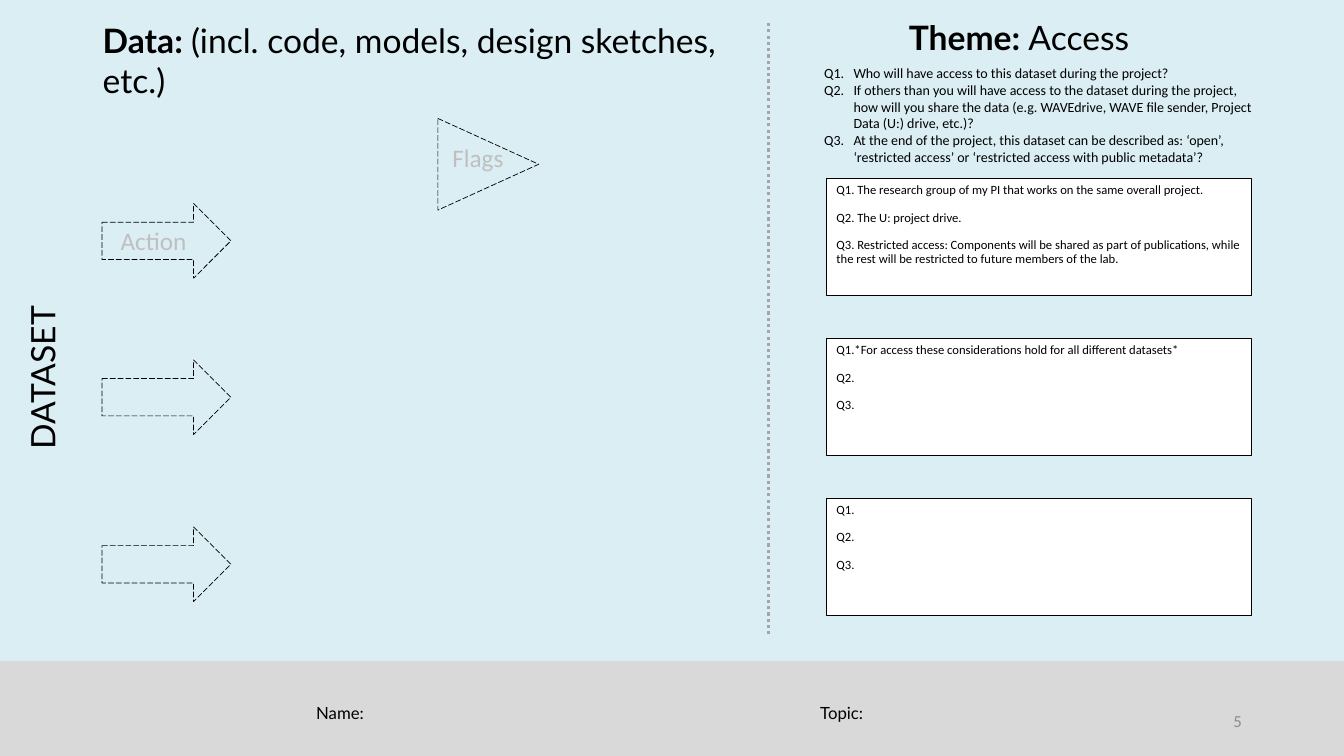
"""Build the data-access worksheet slide."""
import dataclasses

import lxml.etree
import pptx
import pptx.dml.color
import pptx.enum.dml
import pptx.enum.shapes
import pptx.enum.text
import pptx.oxml.ns
import pptx.util

Cm = pptx.util.Cm
Pt = pptx.util.Pt
Shapes = pptx.enum.shapes.MSO_SHAPE
Dash = pptx.enum.dml.MSO_LINE
Align = pptx.enum.text.PP_ALIGN
Anchor = pptx.enum.text.MSO_ANCHOR


@dataclasses.dataclass(frozen=True)
class Theme:
    background: str = "DBEEF4"
    footer: str = "D9D9D9"
    ink: str = "000000"
    paper: str = "FFFFFF"
    divider: str = "A5A5A5"
    hint: str = "BFBFBF"
    page: str = "8C8C8C"
    heading_font: str = "Lato"
    body_font: str = "Calibri"
    heading: int = 24
    label: int = 18
    field: int = 12
    question: int = 10
    answer: int = 9


THEME = Theme()

QUESTIONS = [
    "Q1.\tWho will have access to this dataset during the project?",
    "Q2.\tIf others than you will have access to the dataset during the project, "
    "how will you share the data (e.g. WAVEdrive, WAVE file sender, Project "
    "Data (U:) drive, etc.)?",
    "Q3.\tAt the end of the project, this dataset can be described as: ‘open’, "
    "‘restricted access’ or ‘restricted access with public metadata’?",
]
ANSWERS = [
    [
        "Q1. The research group of my PI that works on the same overall project.",
        "Q2. The U: project drive.",
        "Q3. Restricted access: Components will be shared as part of publications, "
        "while the rest will be restricted to future members of the lab.",
    ],
    ["Q1.*For access these considerations hold for all different datasets*", "Q2.", "Q3."],
    ["Q1.", "Q2.", "Q3."],
]


def rgb(code):
    """Turn a hex code into a colour."""
    return pptx.dml.color.RGBColor.from_string(code)


def set_font(paragraph, size, family, color=THEME.ink):
    """Give a whole paragraph its type."""
    paragraph.font.size = Pt(size)
    paragraph.font.name = family
    paragraph.font.color.rgb = rgb(color)


def add_figure(slide, preset, box, fill=None, line=None, dash=None):
    """Add a preset shape with optional fill and outline."""
    figure = slide.shapes.add_shape(preset, *map(Cm, box))
    figure.shadow.inherit = False
    if fill:
        figure.fill.solid()
        figure.fill.fore_color.rgb = rgb(fill)
    else:
        figure.fill.background()
    if line:
        figure.line.color.rgb = rgb(THEME.ink)
        figure.line.width = Pt(line)
        if dash:
            figure.line.dash_style = dash
    else:
        figure.line.fill.background()
    return figure


def add_label(slide, box, text, size, family, color=THEME.ink, align=Align.LEFT,
              spacing=1.0, lead=""):
    """Add a one-paragraph text box with an optional bold lead-in."""
    label = slide.shapes.add_textbox(*map(Cm, box))
    label.text_frame.word_wrap = True
    paragraph = label.text_frame.paragraphs[0]
    paragraph.alignment = align
    paragraph.line_spacing = spacing
    if lead:
        bold_lead = paragraph.add_run()
        bold_lead.text = lead
        bold_lead.font.bold = True
    paragraph.add_run().text = text
    set_font(paragraph, size, family, color)
    return label


def add_paragraphs(frame, texts):
    """Fill a text frame and return its paragraphs."""
    frame.word_wrap = True
    frame.text = "\n".join(texts)
    return frame.paragraphs


def add_questions(slide, box):
    """Add the questions with hanging indents."""
    questions = slide.shapes.add_textbox(*map(Cm, box))
    for paragraph in add_paragraphs(questions.text_frame, QUESTIONS):
        properties = paragraph._p.get_or_add_pPr()
        properties.set("marL", str(Cm(0.74)))
        properties.set("indent", str(-Cm(0.74)))
        set_font(paragraph, THEME.question, THEME.body_font)


def add_answers(slide, box, texts):
    """Add one outlined answer box."""
    card = add_figure(slide, Shapes.RECTANGLE, box, THEME.paper, 0.75)
    card.text_frame.vertical_anchor = Anchor.TOP
    for row, paragraph in enumerate(add_paragraphs(card.text_frame, texts)):
        paragraph.alignment = Align.LEFT
        paragraph.line_spacing = 0.9
        if row:
            paragraph.space_before = Pt(10)
        set_font(paragraph, THEME.answer, THEME.body_font)


def add_divider(slide, x, top, bottom):
    """Add the dotted vertical divider."""
    divider = slide.shapes.add_connector(
        pptx.enum.shapes.MSO_CONNECTOR.STRAIGHT, Cm(x), Cm(top), Cm(x), Cm(bottom))
    divider.line.color.rgb = rgb(THEME.divider)
    divider.line.width = Pt(2.25)
    divider.line.dash_style = Dash.ROUND_DOT
    lxml.etree.SubElement(divider._element.spPr, pptx.oxml.ns.qn("a:effectLst"))


def main():
    """Build and save the slide."""
    deck = pptx.Presentation()
    deck.slide_width, deck.slide_height = Cm(33.87), Cm(19.05)
    slide = deck.slides.add_slide(deck.slide_layouts[6])
    slide.background.fill.solid()
    slide.background.fill.fore_color.rgb = rgb(THEME.background)

    add_figure(slide, Shapes.RECTANGLE, (0, 16.66, 33.87, 2.39), THEME.footer)
    dataset = add_label(slide, (-4.55, 8.97, 11.43, 1.09), "DATASET", THEME.heading,
                        THEME.heading_font, align=Align.CENTER, spacing=0.8)
    dataset.rotation = 270
    add_divider(slide, 19.36, 0.58, 16.03)
    add_questions(slide, (20.52, 1.5, 11.28, 2.82))
    add_label(slide, (17.48, 0.3, 16.4, 1.28), "Access", THEME.heading,
              THEME.heading_font, align=Align.CENTER, lead="Theme: ")

    for top in (5.13, 9.07, 13.28):
        add_figure(slide, Shapes.RIGHT_ARROW, (2.57, top, 3.25, 1.88),
                   line=0.5, dash=Dash.LONG_DASH)
    add_label(slide, (2.79, 5.56, 2.36, 1.03), "Action", THEME.label,
              THEME.body_font, THEME.hint)
    add_label(slide, (11.15, 3.45, 1.8, 1.03), "Flags", THEME.label,
              THEME.body_font, THEME.hint)
    flag = add_figure(slide, Shapes.ISOSCELES_TRIANGLE, (11.15, 2.87, 2.31, 2.54),
                      line=0.5, dash=Dash.LONG_DASH)
    flag.rotation = 90
    add_label(slide, (2.34, 0.38, 16.54, 1.28),
              "(incl. code, models, design sketches, etc.)", THEME.heading,
              THEME.heading_font, lead="Data: ")

    for row, texts in enumerate(ANSWERS):
        add_answers(slide, (20.83, 4.5 + row * 4.03, 10.72, 2.95), texts)
    for left, caption in ((7.72, "Name:"), (20.42, "Topic:")):
        add_label(slide, (left, 17.65, 11.43, 1.09), caption, THEME.field,
                  THEME.heading_font, spacing=0.9)
    page = add_label(slide, (23.93, 17.65, 7.62, 1.02), "5", THEME.field,
                     THEME.body_font, THEME.page, Align.RIGHT)
    page.text_frame.vertical_anchor = Anchor.MIDDLE
    deck.save("out.pptx")


if __name__ == "__main__":
    main()
